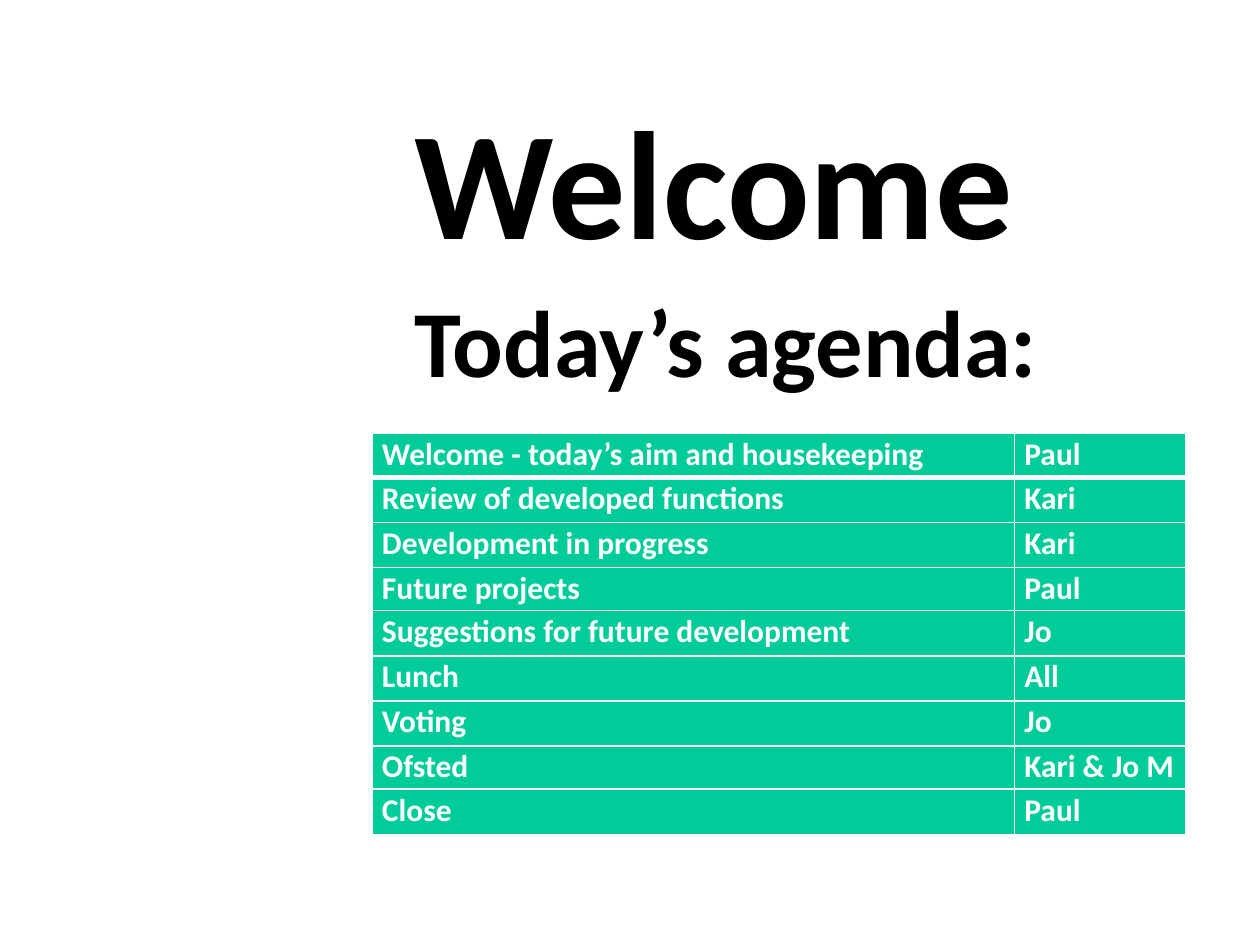
from pptx import Presentation
from pptx import util as u
from pptx.dml.color import RGBColor
from pptx.enum import text as t
from pptx.oxml import parse_xml
from pptx.oxml.ns import nsdecls

BLACK = RGBColor(0, 0, 0)
WHITE = RGBColor(255, 255, 255)
GREEN = RGBColor(0x00, 0xCC, 0x99)


def write(para, words, size, color, before=0, line=1.0):
    para.alignment = t.PP_ALIGN.LEFT
    para.space_before = u.Pt(before)
    para.line_spacing = line
    run = para.add_run()
    run.text = words
    font = run.font
    font.name, font.size, font.bold = "Calibri", u.Pt(size), True
    font.color.rgb = color


def edge(cell, side, width):
    cell._tc.get_or_add_tcPr().append(parse_xml(
        f'<a:{side} {nsdecls("a")} w="{u.Pt(width)}"><a:solidFill>'
        f'<a:srgbClr val="{WHITE}"/></a:solidFill></a:{side}>'))


deck = Presentation()
deck.slide_width, deck.slide_height = u.Cm(25.4), u.Cm(19.05)
slide = deck.slides.add_slide(deck.slide_layouts[5])

title = slide.shapes.title
title.left, title.top = u.Cm(8.1), u.Cm(1.45)
title.width, title.height = u.Cm(18.85), u.Cm(11.43)
frame = title.text_frame
frame.word_wrap = True
frame.auto_size = t.MSO_AUTO_SIZE.NONE
frame.vertical_anchor = t.MSO_ANCHOR.TOP
frame.margin_top = u.Cm(0.28)
write(frame.paragraphs[0], "Welcome", 88, BLACK)
write(frame.add_paragraph(), "Today’s agenda:", 54, BLACK, before=7)

agenda = [
    ("Welcome - today’s aim and housekeeping", "Paul", 0.88),
    ("Review of developed functions", "Kari", 0.91),
    ("Development in progress", "Kari", 0.91),
    ("Future projects", "Paul", 0.87),
    ("Suggestions for future development", "Jo", 0.91),
    ("Lunch", "All", 0.91),
    ("Voting", "Jo", 0.91),
    ("Ofsted", "Kari & Jo M", 0.87),
    ("Close", "Paul", 0.91),
]
table = slide.shapes.add_table(
    len(agenda), 2, u.Cm(7.5), u.Cm(8.74), u.Cm(16.4), u.Cm(8.1)).table
table.columns[0].width = u.Cm(12.95)
table.columns[1].width = u.Cm(3.45)

for r, (topic, host, height) in enumerate(agenda):
    table.rows[r].height = u.Cm(height)
    for c, words in enumerate((topic, host)):
        cell = table.cell(r, c)
        cell.margin_left = cell.margin_right = u.Cm(0.2)
        cell.margin_top = cell.margin_bottom = 0
        write(cell.text_frame.paragraphs[0], words, 18, WHITE, line=1.05)
        edge(cell, "lnL", 1)
        edge(cell, "lnR", 1)
        edge(cell, "lnT", 3 if r == 1 else 1)
        edge(cell, "lnB", 3 if r == 0 else 1)
        cell.fill.solid()
        cell.fill.fore_color.rgb = GREEN

deck.save("out.pptx")
